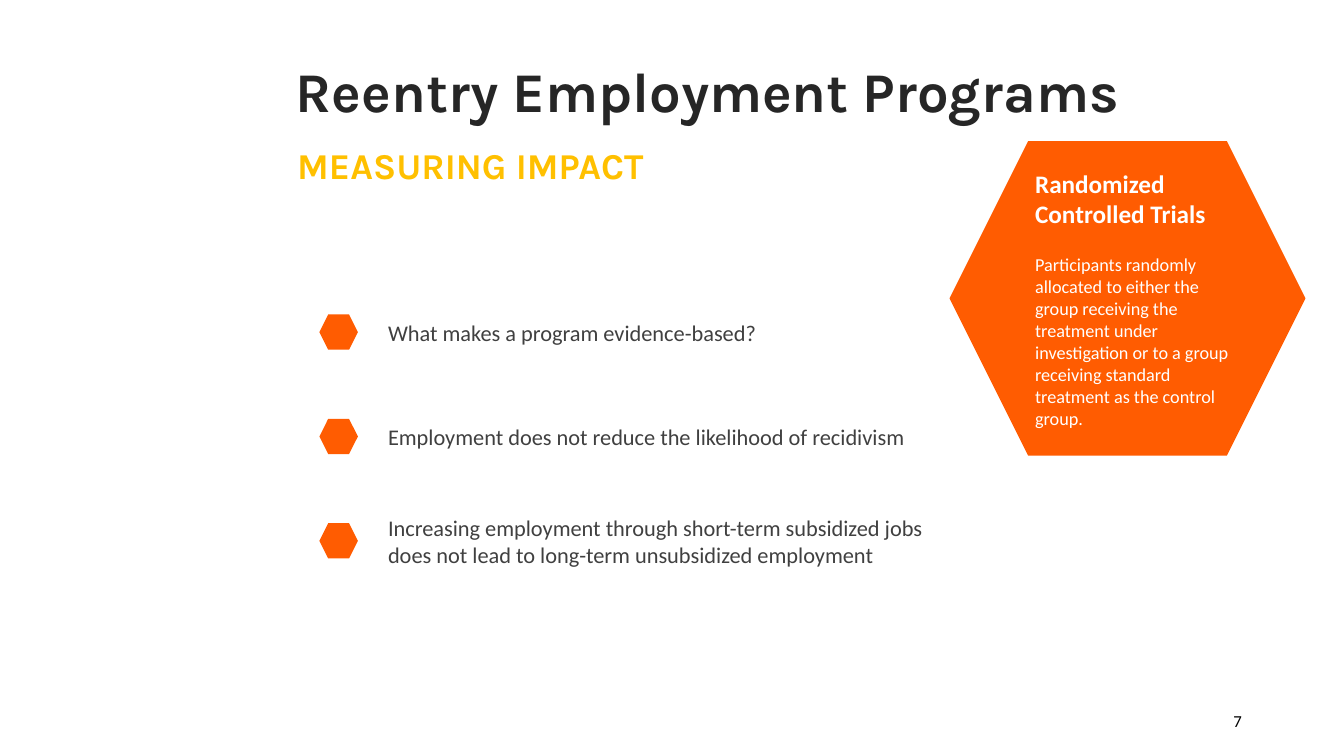
from dataclasses import dataclass

from pptx import Presentation
from pptx.dml.color import RGBColor
from pptx.enum.shapes import MSO_SHAPE
from pptx.enum.text import MSO_ANCHOR, PP_ALIGN
from pptx.shapes.autoshape import Shape
from pptx.shapes.shapetree import GroupShapes, SlideShapes
from pptx.text.text import _Paragraph as Paragraph
from pptx.util import Cm, Pt

ORANGE = "FF5C01"
GOLD = "FFC000"
WHITE = "FFFFFF"
BLACK = "000000"
DARK_GRAY = "262626"
GRAY = "404040"


@dataclass(frozen=True)
class Box:
    left: float
    top: float
    width: float
    height: float


@dataclass(frozen=True)
class Style:
    size: float
    color: str
    font: str = "Calibri"
    bold: bool = False


@dataclass(frozen=True)
class Label:
    text: str
    box: Box
    style: Style
    anchor: MSO_ANCHOR = MSO_ANCHOR.TOP
    alignment: PP_ALIGN = PP_ALIGN.LEFT


@dataclass(frozen=True)
class Finding:
    text: str
    width: float
    height: float


LABELS = [
    Label("Reentry Employment Programs", Box(7.21, 1.3, 24.54, 1.96),
          Style(40, DARK_GRAY, "Karla", True)),
    Label("7", Box(23.93, 17.65, 7.62, 1.02), Style(12, BLACK),
          MSO_ANCHOR.MIDDLE, PP_ALIGN.RIGHT),
    Label("MEASURING IMPACT", Box(7.24, 3.48, 18.36, 1.37),
          Style(26, GOLD, "Karla", True)),
]

FINDINGS = [
    Finding("What makes a program evidence-based?", 17.5, 0.94),
    Finding("Employment does not reduce the likelihood of recidivism", 17.02, 0.94),
    Finding("Increasing employment through short-term subsidized jobs\n"
            "does not lead to long-term unsubsidized employment", 16.51, 1.63),
]
FIRST_CENTER = 8.37
FINDING_PITCH = 2.63
MARKER_WIDTH = 0.97
MARKER_HEIGHT = 0.89

TRIALS_BOX = Box(23.93, 3.56, 8.97, 7.92)
TRIALS_HEADING = "Randomized Controlled Trials"
TRIALS_BODY = (
    "Participants randomly allocated to either the group receiving the "
    "treatment under investigation or to a group receiving standard "
    "treatment as the control group."
)


def color_of(value: str) -> RGBColor:
    return RGBColor.from_string(value)


def format_paragraph(paragraph: Paragraph, style: Style,
                     alignment: PP_ALIGN = PP_ALIGN.LEFT) -> None:
    paragraph.alignment = alignment
    for run in paragraph.runs:
        run.font.name = style.font
        run.font.size = Pt(style.size)
        run.font.bold = style.bold
        run.font.color.rgb = color_of(style.color)


def add_label(shapes: SlideShapes | GroupShapes, label: Label) -> None:
    box = label.box
    shape = shapes.add_textbox(Cm(box.left), Cm(box.top), Cm(box.width), Cm(box.height))
    text_frame = shape.text_frame
    text_frame.word_wrap = True
    text_frame.vertical_anchor = label.anchor
    text_frame.text = label.text
    for paragraph in text_frame.paragraphs:
        format_paragraph(paragraph, label.style, label.alignment)


def add_hexagon(shapes: SlideShapes | GroupShapes, box: Box) -> Shape:
    shape = shapes.add_shape(MSO_SHAPE.HEXAGON, Cm(box.left), Cm(box.top),
                             Cm(box.width), Cm(box.height))
    shape.shadow.inherit = False
    shape.fill.solid()
    shape.fill.fore_color.rgb = color_of(ORANGE)
    shape.line.fill.background()
    return shape


def add_finding(shapes: SlideShapes, finding: Finding, center: float) -> None:
    group = shapes.add_group_shape()
    add_hexagon(group.shapes, Box(8.05, center - MARKER_HEIGHT / 2,
                                  MARKER_WIDTH, MARKER_HEIGHT))
    text_box = Box(9.53, center - finding.height / 2, finding.width, finding.height)
    add_label(group.shapes, Label(finding.text, text_box, Style(16, GRAY),
                                  MSO_ANCHOR.MIDDLE))


def add_trials(shapes: SlideShapes) -> None:
    text_frame = add_hexagon(shapes, TRIALS_BOX).text_frame
    text_frame.word_wrap = True
    text_frame.vertical_anchor = MSO_ANCHOR.MIDDLE
    text_frame.text = f"{TRIALS_HEADING}\n{TRIALS_BODY}"
    heading, body = text_frame.paragraphs
    format_paragraph(heading, Style(18, WHITE, bold=True))
    format_paragraph(body, Style(13, WHITE))
    body.space_before = Pt(18)
    for paragraph in (heading, body):
        paragraph._p.get_or_add_pPr().set("marL", str(Cm(0.5)))


def main() -> None:
    presentation = Presentation()
    presentation.slide_width = Cm(33.87)
    presentation.slide_height = Cm(19.05)
    slide = presentation.slides.add_slide(presentation.slide_layouts[6])
    for label in LABELS:
        add_label(slide.shapes, label)
    for index, finding in enumerate(FINDINGS):
        add_finding(slide.shapes, finding, FIRST_CENTER + index * FINDING_PITCH)
    add_trials(slide.shapes)
    presentation.save("out.pptx")


if __name__ == "__main__":
    main()
